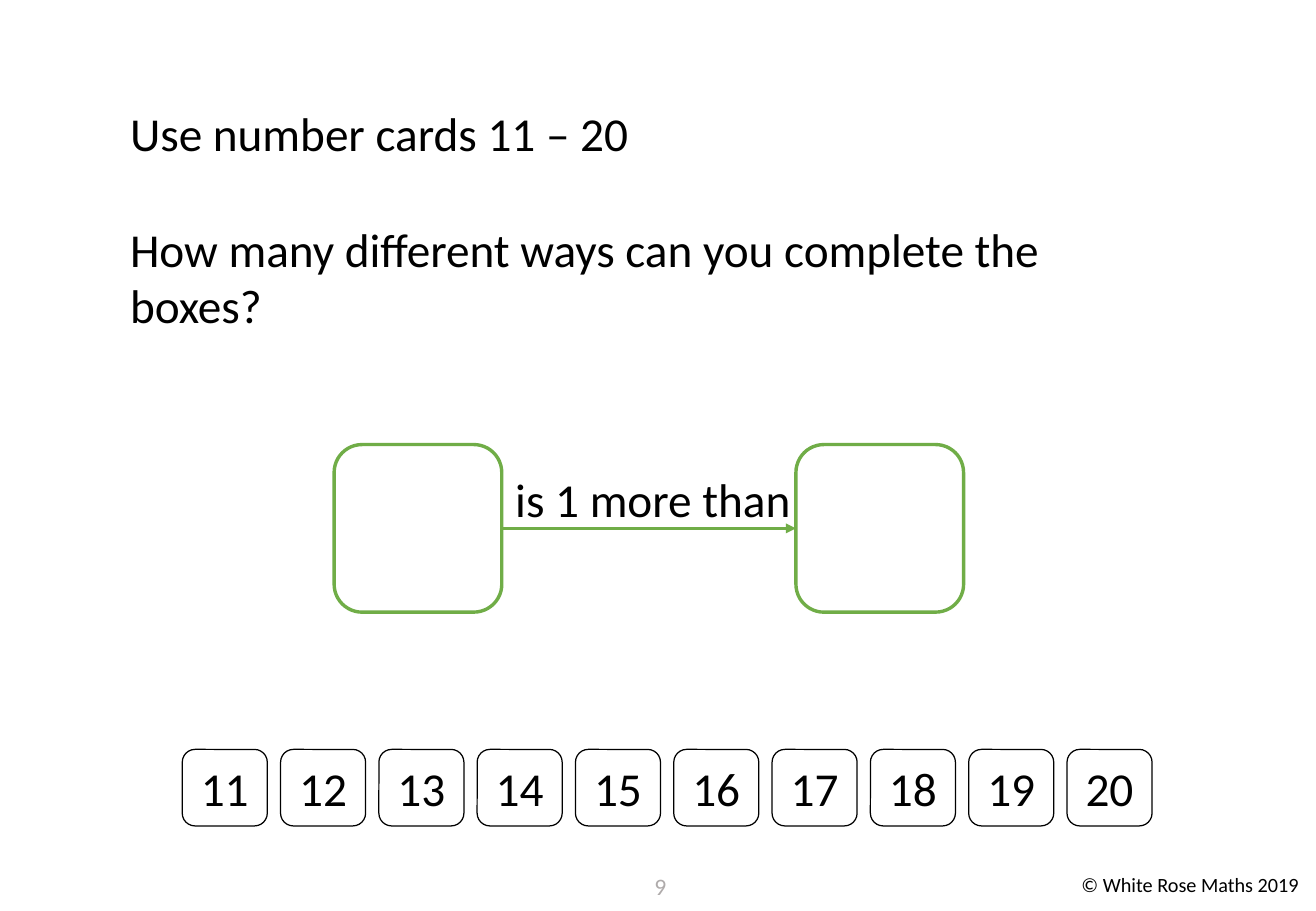
from pptx import Presentation
from pptx.dml.color import RGBColor
from pptx.enum.shapes import MSO_CONNECTOR, MSO_SHAPE
from pptx.enum.text import MSO_ANCHOR, MSO_AUTO_SIZE, PP_ALIGN
from pptx.oxml.ns import qn
from pptx.util import Inches, Pt
from lxml.etree import SubElement

WIDE, HIGH = Inches(10.83), Inches(7.5)
BLACK, GREEN, WHITE, GREY = "000000", "70AD47", "FFFFFF", "AFABAB"
LEFT, CENTER = PP_ALIGN.LEFT, PP_ALIGN.CENTER
TOP, MIDDLE = MSO_ANCHOR.TOP, MSO_ANCHOR.MIDDLE


def color(code):
    return RGBColor.from_string(code)


def across(share):
    return round(WIDE * share / 100)


def down(share):
    return round(HIGH * share / 100)


def area(left, top, width, height):
    return across(left), down(top), across(width), down(height)


def write(shape, text, size=28, ink=BLACK, align=LEFT, anchor=TOP):
    frame = shape.text_frame
    frame.word_wrap = True
    frame.auto_size = MSO_AUTO_SIZE.NONE
    frame.vertical_anchor = anchor
    frame.margin_left = frame.margin_right = 0
    frame.margin_top = frame.margin_bottom = 0
    line = frame.paragraphs[0]
    line.alignment = align
    line.space_before = Pt(0)
    run = line.add_run()
    run.text = text
    run.font.name = "Calibri"
    run.font.size = Pt(size)
    run.font.color.rgb = color(ink)


def place(holder, spot, text):
    holder.left, holder.top, holder.width, holder.height = area(*spot)
    write(holder, text)


def plain(holder):
    props = holder.text_frame.paragraphs[0]._p.get_or_add_pPr()
    props.set("marL", "0")
    props.set("indent", "0")
    SubElement(props, qn("a:buNone"))


def label(slide, spot, text, **style):
    write(slide.shapes.add_textbox(*area(*spot)), text, **style)


def card(slide, spot, edge, weight, fill=None):
    shape = slide.shapes.add_shape(MSO_SHAPE.ROUNDED_RECTANGLE, *area(*spot))
    shape.shadow.inherit = False
    shape.line.color.rgb = color(edge)
    shape.line.width = Pt(weight)
    if fill:
        shape.fill.solid()
        shape.fill.fore_color.rgb = color(fill)
    else:
        shape.fill.background()
    return shape


def arrow(slide, start, end, level):
    link = slide.shapes.add_connector(
        MSO_CONNECTOR.STRAIGHT, across(start), down(level), across(end), down(level))
    link.line.color.rgb = color(GREEN)
    link.line.width = Pt(1.5)
    SubElement(link.line._get_or_add_ln(), qn("a:tailEnd"), type="triangle")
    SubElement(link._element.spPr, qn("a:effectLst"))


def main():
    deck = Presentation()
    deck.slide_width, deck.slide_height = WIDE, HIGH
    slide = deck.slides.add_slide(deck.slide_layouts[1])
    title, body = slide.placeholders
    place(title, (9.88, 11.47, 79.5, 6.5), "Use number cards 11 – 20")
    plain(body)
    place(body, (9.88, 24.13, 79.5, 13),
          "How many different ways can you complete the boxes?")

    first, second, side = 25.39, 60.48, 12.74
    label(slide, (38.5, 51.6, 22.2, 6.4), "is 1 more than", align=CENTER)
    for left in (first, second):
        card(slide, (left, 48.8, side, 18.4), GREEN, 2, WHITE)
    arrow(slide, first + side, second, 58)

    for step in range(10):
        shape = card(slide, (13.85 + step * 7.47, 82.27, 6.46, 8.4), BLACK, 0.75)
        write(shape, str(11 + step), align=CENTER, anchor=MIDDLE)

    label(slide, (47.83, 95.73, 4.71, 4), "9", size=14, ink=GREY, align=CENTER)
    label(slide, (82.18, 95.73, 17.4, 3), "© White Rose Maths 2019", size=12)
    deck.save("out.pptx")


if __name__ == "__main__":
    main()
